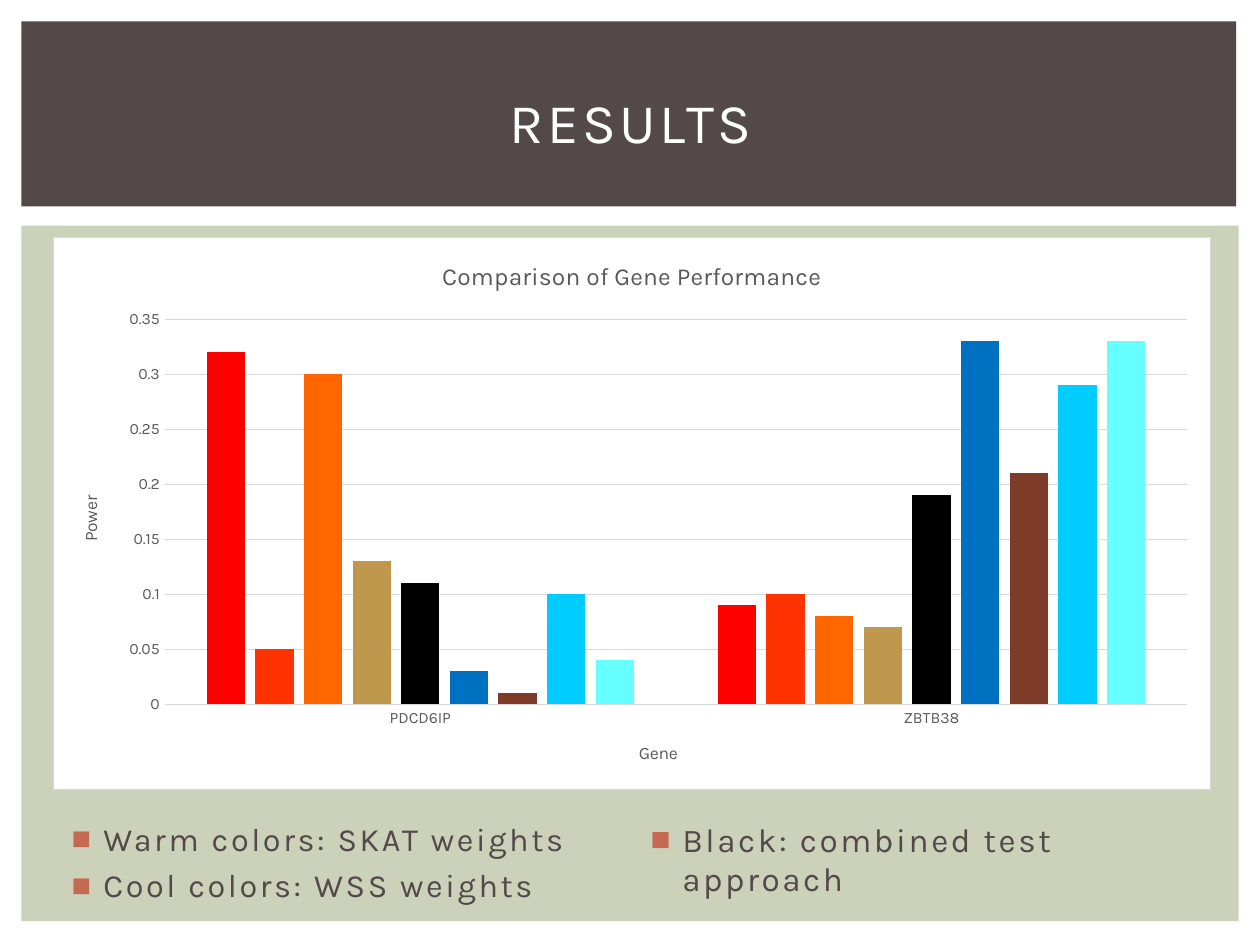
"""Build the results slide: a gene performance chart above two columns of notes."""
from pptx import Presentation
from pptx.chart.data import CategoryChartData
from pptx.dml.color import RGBColor
from pptx.enum.chart import XL_CHART_TYPE, XL_TICK_MARK
from pptx.enum.shapes import MSO_SHAPE
from pptx.enum.text import MSO_ANCHOR, MSO_AUTO_SIZE, PP_ALIGN
from pptx.oxml import parse_xml
from pptx.oxml.ns import nsdecls, qn
from pptx.util import Cm, Pt

COLUMN = XL_CHART_TYPE.COLUMN_CLUSTERED
NO_TICK = XL_TICK_MARK.NONE
RECTANGLE = MSO_SHAPE.RECTANGLE
TOP, MIDDLE = MSO_ANCHOR.TOP, MSO_ANCHOR.MIDDLE
LEFT, CENTER = PP_ALIGN.LEFT, PP_ALIGN.CENTER
NO_FIT = MSO_AUTO_SIZE.NONE

FONT = "Karla"
COLORS = {
    "white": "FFFFFF", "panel": "CCD1B9", "banner": "534949", "text": "534949",
    "bullet": "C66951", "label": "595959", "grid": "D9D9D9",
}

TITLE = "RESULTS"
NOTES = [
    (["Warm colors: SKAT weights", "Cool colors: WSS weights"], 18.5),
    (["Black: combined test approach"], 19),
]
CHART_TITLE, GENE_TITLE, POWER_TITLE = "Comparison of Gene Performance", "Gene", "Power"
GENES = ["PDCD6IP", "ZBTB38"]
POWERS = [
    ("FF0000", (0.32, 0.09)),
    ("FF3300", (0.3 / 6, 0.1)),
    ("FF6600", (0.3, 0.08)),
    ("BF974D", (0.13, 0.07)),
    ("000000", (0.11, 0.19)),
    ("0070C0", (0.03, 0.33)),
    ("7E3B29", (0.01, 0.21)),
    ("00CCFF", (0.1, 0.29)),
    ("66FFFF", (0.04, 0.33)),
]
POWERS[1] = ("FF3300", (0.05, 0.1))

MARGIN = 1.07
NOTE_WIDTH = 11.67
BACKDROPS = [
    ("banner", (0.43, 0.43, 24.49, 3.73)),
    ("panel", (0.43, 4.55, 24.54, 14.02)),
]
TITLE_BOX = (MARGIN, 0.99, 23.29, 2.92)
CHART_BOX = (MARGIN, 4.78, 2 * NOTE_WIDTH, 11.15)
NOTE_TOP, NOTE_HEIGHT = 16.38, 1.83


def rgb(name):
    return RGBColor.from_string(COLORS.get(name, name))


def place(shape, box):
    shape.left, shape.top, shape.width, shape.height = map(Cm, box)


def style_font(font, size, color):
    font.name, font.size, font.bold = FONT, Pt(size), False
    font.color.rgb = rgb(color)


def write(frame, lines, size, color, spacing=0, align=None, anchor=None, bullet=None):
    if anchor is not None:
        frame.auto_size, frame.word_wrap = NO_FIT, True
        frame.vertical_anchor = anchor
    for index, line in enumerate(lines):
        paragraph = frame.add_paragraph() if index else frame.paragraphs[0]
        if align is not None:
            paragraph.alignment = align
        run = paragraph.add_run()
        run.text = line
        style_font(run.font, size, color)
        if spacing:
            run.font._element.set("spc", str(int(spacing * 100)))
        if bullet:
            paragraph.space_before = Pt(size * 0.24)
            properties = paragraph._p.get_or_add_pPr()
            properties.set("marL", str(Cm(0.76)))
            properties.set("indent", str(Cm(-0.64)))
            properties.append(parse_xml(
                f'<a:buClr {nsdecls("a")}><a:srgbClr val="{COLORS["bullet"]}"/></a:buClr>'))
            properties.append(parse_xml(f'<a:buChar {nsdecls("a")} char="{bullet}"/>'))


def add_backdrop(slide, color, box):
    backdrop = slide.shapes.add_shape(RECTANGLE, *map(Cm, box))
    backdrop.shadow.inherit = False
    backdrop.fill.solid()
    backdrop.fill.fore_color.rgb = rgb(color)
    backdrop.line.fill.background()
    slide.shapes._spTree.insert(2, backdrop._element)


def style_axis(axis, title):
    axis.major_tick_mark = axis.minor_tick_mark = NO_TICK
    style_font(axis.tick_labels.font, 9, "label")
    write(axis.axis_title.text_frame, [title], 10, "label")


def style_line(line):
    line.color.rgb = rgb("grid")
    line.width = Pt(0.75)


def add_power_chart(slide):
    data = CategoryChartData()
    data.categories = GENES
    for number, (_, values) in enumerate(POWERS, 1):
        data.add_series(f"Series {number}", values)
    chart = slide.shapes.add_chart(COLUMN, *map(Cm, CHART_BOX), data).chart
    chart.has_legend = False
    style_font(chart.font, 10, "000000")
    write(chart.chart_title.text_frame, [CHART_TITLE], 14, "label")
    chart.element.find(qn("c:chart")).addnext(parse_xml(
        f'<c:spPr {nsdecls("c", "a")}>'
        f'<a:solidFill><a:srgbClr val="{COLORS["white"]}"/></a:solidFill>'
        f'<a:ln w="{Pt(0.75)}"><a:solidFill><a:srgbClr val="{COLORS["grid"]}"/>'
        '</a:solidFill></a:ln></c:spPr>'))

    plot = chart.plots[0]
    plot.gap_width, plot.overlap, plot.vary_by_categories = 219, -27, False
    for series, (color, _) in zip(plot.series, POWERS):
        series.format.fill.solid()
        series.format.fill.fore_color.rgb = rgb(color)

    style_axis(chart.category_axis, GENE_TITLE)
    style_line(chart.category_axis.format.line)
    power_axis = chart.value_axis
    style_axis(power_axis, POWER_TITLE)
    power_axis.format.line.fill.background()
    power_axis.minimum_scale, power_axis.maximum_scale = 0, 0.35
    power_axis.major_unit = 0.05
    power_axis.has_major_gridlines = True
    style_line(power_axis.major_gridlines.format.line)


def main():
    deck = Presentation()
    deck.slide_width, deck.slide_height = Cm(25.4), Cm(19.05)
    slide = deck.slides.add_slide(deck.slide_layouts[3])
    title, *note_columns = slide.placeholders
    for color, box in BACKDROPS:
        add_backdrop(slide, color, box)
    place(title, TITLE_BOX)
    write(title.text_frame, [TITLE], 32, "white", spacing=2, align=CENTER, anchor=MIDDLE)
    add_power_chart(slide)
    for index, (column, (lines, size)) in enumerate(zip(note_columns, NOTES)):
        place(column, (MARGIN + index * NOTE_WIDTH, NOTE_TOP, NOTE_WIDTH, NOTE_HEIGHT))
        write(column.text_frame, lines, size, "text", spacing=1.5, align=LEFT,
              anchor=TOP, bullet="■")
    deck.save("out.pptx")


if __name__ == "__main__":
    main()
